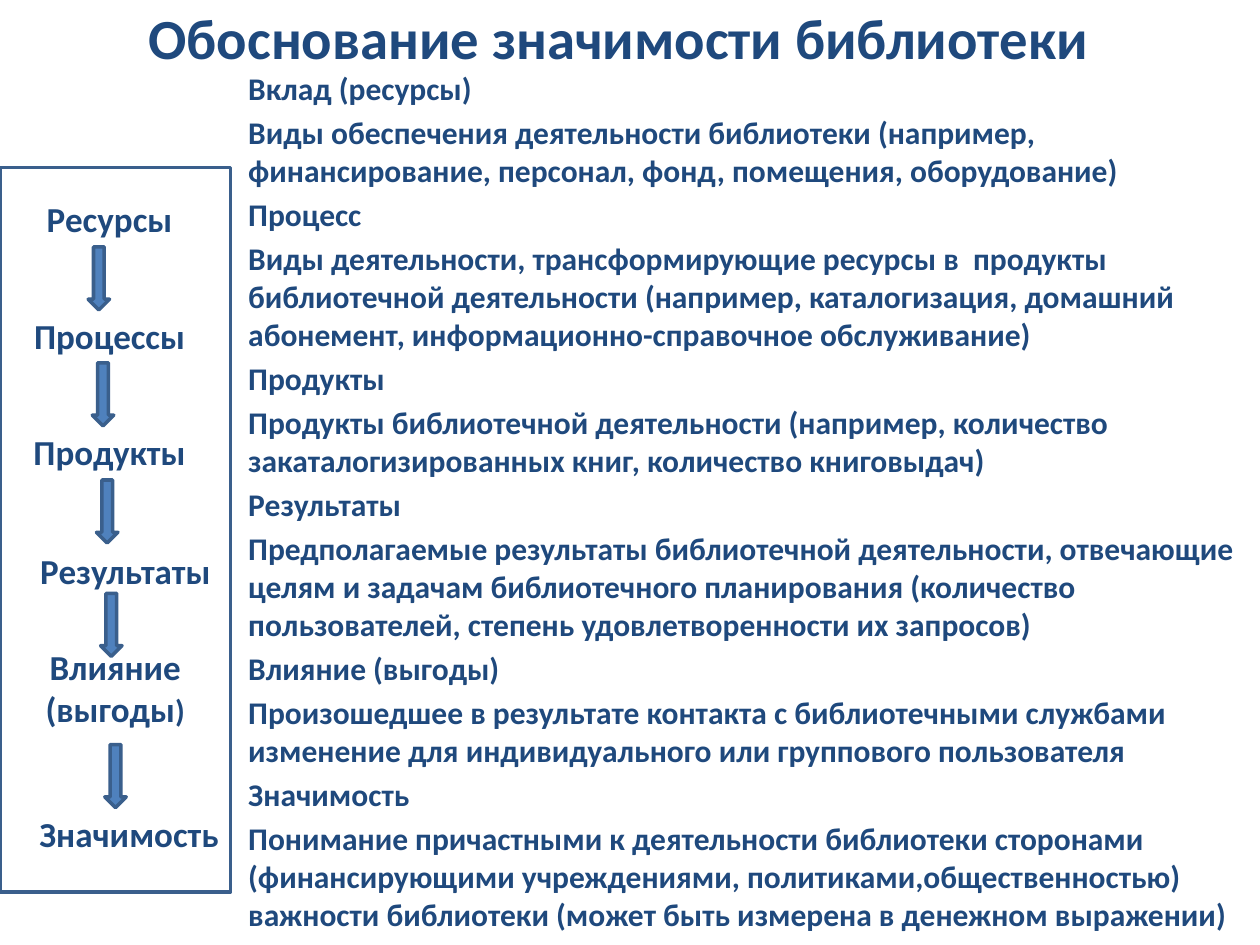
import pptx
import pptx.util
import pptx.dml.color
import pptx.enum.shapes
import pptx.enum.text
import lxml.etree
from dataclasses import dataclass

Inches = pptx.util.Inches
Pt = pptx.util.Pt
Shape = pptx.enum.shapes.MSO_SHAPE
Align = pptx.enum.text.PP_ALIGN
Anchor = pptx.enum.text.MSO_ANCHOR
Fit = pptx.enum.text.MSO_AUTO_SIZE


@dataclass
class Theme:
    font: str = "Calibri"
    text: str = "1F497D"
    fill: str = "4F81BD"
    line: str = "3A5F8C"
    title: float = 32.4
    body: float = 18
    label: float = 20
    stroke: float = 2


THEME = Theme()
TITLE = "Обоснование значимости библиотеки "
TERMS = [
    ("Вклад (ресурсы)",
     "Виды обеспечения деятельности библиотеки (например, финансирование, персонал, фонд, помещения, оборудование)"),
    ("Процесс",
     "Виды деятельности, трансформирующие ресурсы в  продукты библиотечной деятельности (например, каталогизация, домашний абонемент, информационно-справочное обслуживание)"),
    ("Продукты",
     "Продукты библиотечной деятельности (например, количество закаталогизированных книг, количество книговыдач)"),
    ("Результаты",
     "Предполагаемые результаты библиотечной деятельности, отвечающие целям и задачам библиотечного планирования (количество пользователей, степень удовлетворенности их запросов)"),
    ("Влияние (выгоды)",
     "Произошедшее в результате контакта с библиотечными службами изменение для индивидуального или группового пользователя"),
    ("Значимость",
     "Понимание причастными к деятельности библиотеки сторонами (финансирующими учреждениями, политиками,общественностью) важности библиотеки (может быть измерена в денежном выражении)"),
]
STEPS = [
    ([("Ресурсы", THEME.label)], 0.12, 0.19, 1.5, 0.44),
    ([("Процессы", THEME.label)], 0.12, 1.12, 1.5, 0.44),
    ([("Продукты", THEME.label)], 0.12, 2.04, 1.5, 0.44),
    ([("Результаты", THEME.label)], 0.12, 2.98, 1.75, 0.44),
    ([("Влияние (выгоды", THEME.label), (")", THEME.body)], 0.25, 3.74, 1.33, 0.77),
    ([("Значимость", THEME.label)], 0.12, 5.07, 1.81, 0.44),
]
ARROWS = [0.63, 1.55, 2.48, 3.38, 4.58]


def color(code):
    return pptx.dml.color.RGBColor.from_string(code)


def write(para, text, size):
    run = para.add_run()
    run.text = text
    run.font.name = THEME.font
    run.font.size = Pt(size)
    run.font.bold = True
    run.font.color.rgb = color(THEME.text)


def place(shape, box):
    shape.left, shape.top, shape.width, shape.height = map(Inches, box)


def outline(shape):
    shape.shadow.inherit = False
    shape.line.color.rgb = color(THEME.line)
    shape.line.width = Pt(THEME.stroke)


def add_title(slide, box):
    title = slide.shapes.title
    place(title, box)
    frame = title.text_frame
    frame.auto_size = Fit.NONE
    frame.vertical_anchor = Anchor.MIDDLE
    para = frame.paragraphs[0]
    para.alignment = Align.CENTER
    write(para, TITLE, THEME.title)


def add_terms(slide, box):
    body = slide.placeholders[1]
    place(body, box)
    frame = body.text_frame
    frame.auto_size = Fit.NONE
    lines = [line for term in TERMS for line in term]
    for num, line in enumerate(lines):
        para = frame.add_paragraph() if num else frame.paragraphs[0]
        write(para, line, THEME.body)
        props = para._p.get_or_add_pPr()
        props.set("marL", "0")
        props.set("indent", "0")
        lxml.etree.SubElement(props, pptx.oxml.ns.qn("a:buNone"))


def add_flow(slide, box):
    left, top, width, height = box
    group = slide.shapes.add_group_shape()
    for parts, x, y, w, h in STEPS:
        label = group.shapes.add_textbox(*map(Inches, (left + x, top + y, w, h)))
        frame = label.text_frame
        frame.word_wrap = True
        frame.auto_size = Fit.SHAPE_TO_FIT_TEXT
        para = frame.paragraphs[0]
        para.alignment = Align.CENTER
        for text, size in parts:
            write(para, text, size)
    for num, y in enumerate(ARROWS):
        x = left + 0.7 + 0.033 * num
        arrow = group.shapes.add_shape(
            Shape.DOWN_ARROW, *map(Inches, (x, top + y, 0.17, 0.5)))
        arrow.fill.solid()
        arrow.fill.fore_color.rgb = color(THEME.fill)
        outline(arrow)
    border = slide.shapes.add_shape(Shape.RECTANGLE, *map(Inches, box))
    border.fill.background()
    outline(border)


def main():
    deck = pptx.Presentation()
    deck.slide_width = Inches(10)
    deck.slide_height = Inches(7.5)
    slide = deck.slides.add_slide(deck.slide_layouts[1])
    add_title(slide, (0, 0, 9.92, 0.58))
    add_terms(slide, (1.87, 0.5, 8.07, 7))
    add_flow(slide, (0, 1.33, 1.83, 5.75))
    deck.save("out.pptx")


if __name__ == "__main__":
    main()
